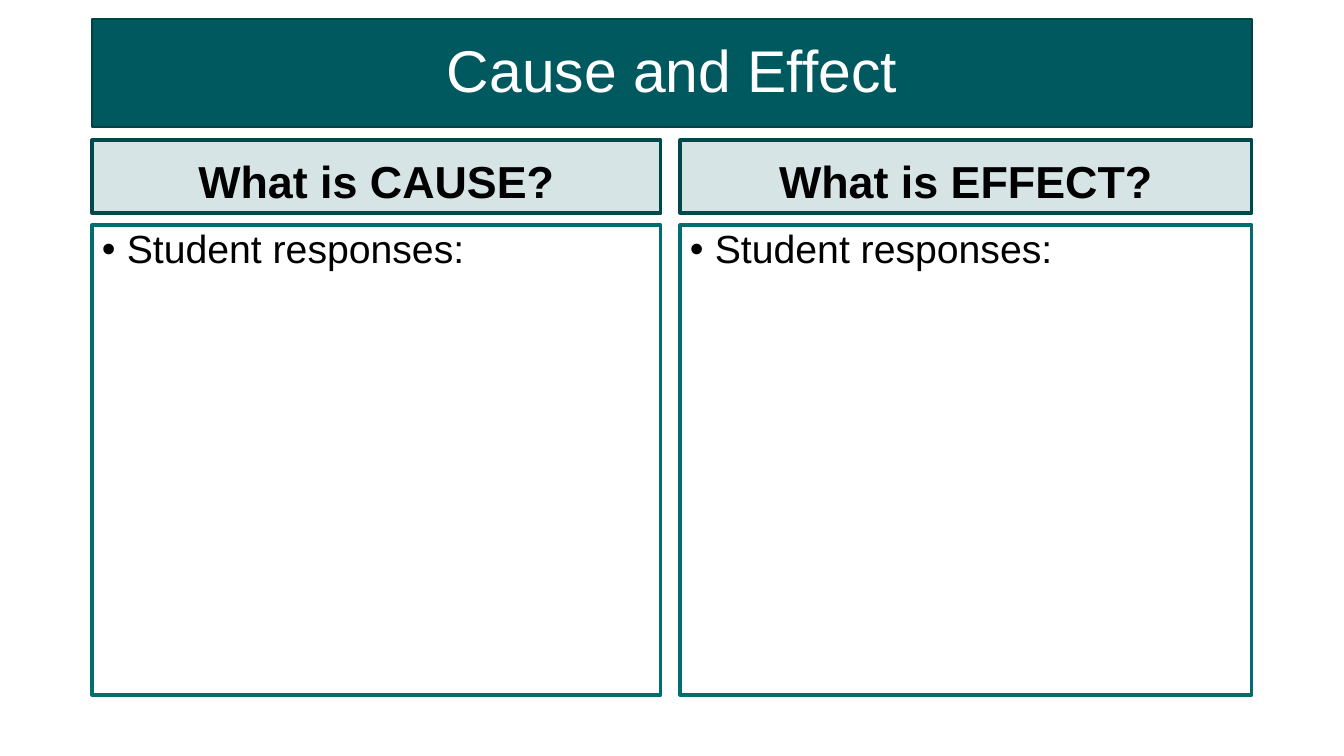
from dataclasses import dataclass

from lxml.etree import SubElement
from pptx import Presentation
from pptx.dml.color import RGBColor
from pptx.enum.shapes import MSO_SHAPE
from pptx.enum.text import MSO_ANCHOR, MSO_AUTO_SIZE, PP_ALIGN
from pptx.oxml.ns import qn
from pptx.util import Emu, Pt

TITLE = "Cause and Effect"
COLUMNS = [
    {"heading": "What is CAUSE?", "response": "Student responses:", "left": 92, "width": 569},
    {"heading": "What is EFFECT?", "response": "Student responses:", "left": 680, "width": 572},
]

SLIDE_SIZE = (1344, 756)
TITLE_BOX = (92, 19, 1160, 108)
HEADING_TOP, HEADING_HEIGHT = 140, 73
RESPONSE_TOP, RESPONSE_HEIGHT = 225, 470
BULLET_INDENT = 25
PX_PER_INCH = 100.8


@dataclass(frozen=True)
class Theme:
    font: str = "Arial"
    title_fill: str = "00595F"
    title_line: str = "004246"
    title_text: str = "FFFFFF"
    heading_fill: str = "D6E4E5"
    heading_line: str = "00494A"
    response_line: str = "006D6E"
    body_text: str = "000000"
    title_size: int = 42
    heading_size: int = 32
    response_size: int = 28
    title_border: float = 1
    box_border: float = 2.25


THEME = Theme()


def px(length):
    return Emu(round(length * 914400 / PX_PER_INCH))


def paint(box, fill, line, border):
    if fill:
        box.fill.solid()
        box.fill.fore_color.rgb = RGBColor.from_string(fill)
    else:
        box.fill.background()
    box.line.color.rgb = RGBColor.from_string(line)
    box.line.width = Pt(border)


def write(box, text, size, color, align, anchor, bold=False, space_before=0):
    frame = box.text_frame
    frame.word_wrap = True
    frame.auto_size = MSO_AUTO_SIZE.NONE
    frame.vertical_anchor = anchor
    para = frame.paragraphs[0]
    para.alignment = align
    para.line_spacing = 0.9
    para.space_before = Pt(space_before)
    span = para.add_run()
    span.text = text
    span.font.name = THEME.font
    span.font.size = Pt(size)
    span.font.bold = bold
    span.font.color.rgb = RGBColor.from_string(color)
    return para


def add_bullet(para):
    properties = para._p.get_or_add_pPr()
    properties.set("marL", str(px(BULLET_INDENT)))
    properties.set("indent", str(-px(BULLET_INDENT)))
    SubElement(properties, qn("a:buFont"), typeface=THEME.font)
    SubElement(properties, qn("a:buChar"), char="•")


def add_box(page, left, top, width, height, fill, line):
    box = page.shapes.add_shape(
        MSO_SHAPE.RECTANGLE, px(left), px(top), px(width), px(height))
    box.shadow.inherit = False
    paint(box, fill, line, THEME.box_border)
    return box


def add_title(page):
    title = page.shapes.title
    title.left, title.top, title.width, title.height = map(px, TITLE_BOX)
    paint(title, THEME.title_fill, THEME.title_line, THEME.title_border)
    write(title, TITLE, THEME.title_size, THEME.title_text,
          PP_ALIGN.CENTER, MSO_ANCHOR.MIDDLE)


def add_column(page, column):
    left, width = column["left"], column["width"]
    heading = add_box(page, left, HEADING_TOP, width, HEADING_HEIGHT,
                      THEME.heading_fill, THEME.heading_line)
    write(heading, column["heading"], THEME.heading_size, THEME.body_text,
          PP_ALIGN.CENTER, MSO_ANCHOR.BOTTOM, bold=True, space_before=10)
    response = add_box(page, left, RESPONSE_TOP, width, RESPONSE_HEIGHT,
                       None, THEME.response_line)
    para = write(response, column["response"], THEME.response_size, THEME.body_text,
                 PP_ALIGN.LEFT, MSO_ANCHOR.TOP, space_before=10)
    add_bullet(para)


def main():
    deck = Presentation()
    deck.slide_width, deck.slide_height = map(px, SLIDE_SIZE)
    page = deck.slides.add_slide(deck.slide_layouts.get_by_name("Title Only"))
    add_title(page)
    for column in COLUMNS:
        add_column(page, column)
    deck.save("out.pptx")


if __name__ == "__main__":
    main()
